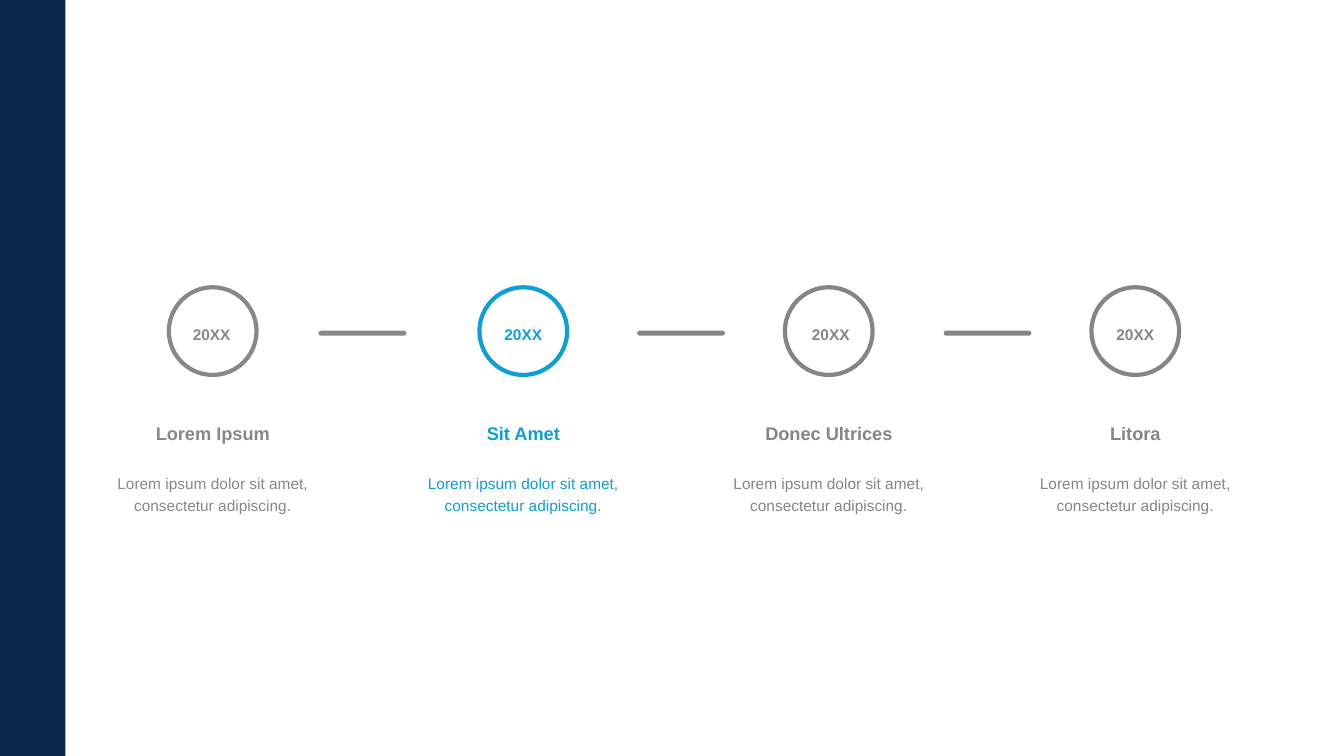
import dataclasses

import pptx
import pptx.dml.color
import pptx.enum.shapes
import pptx.enum.text
import pptx.util

Inches = pptx.util.Inches
Anchor = pptx.enum.text.MSO_ANCHOR
Preset = pptx.enum.shapes.MSO_SHAPE


@dataclasses.dataclass(frozen=True)
class Theme:
    navy: str = "09274B"
    blue: str = "0F9ED5"
    gray: str = "888888"
    dark_gray: str = "858585"
    font: str = "Arial"
    heading_size: int = 13
    text_size: int = 11
    ring_width: int = 3


@dataclasses.dataclass(frozen=True)
class Milestone:
    center: float
    year_center: float
    heading: str
    color: str


THEME = Theme()
YEAR = "20XX"
DETAIL = "Lorem ipsum dolor sit amet, consectetur adipiscing."
MILESTONES = [
    Milestone(2.11, 2.10, "Lorem Ipsum", THEME.gray),
    Milestone(5.19, 5.19, "Sit Amet", THEME.blue),
    Milestone(8.22, 8.24, "Donec Ultrices", THEME.dark_gray),
    Milestone(11.26, 11.26, "Litora", THEME.dark_gray),
]
# Left edge and color of each dash between two milestones
DASHES = [(3.16, THEME.gray), (6.32, THEME.dark_gray), (9.36, THEME.dark_gray)]
RING_SIZE = 0.87
TEXT_WIDTH = 2.49


def rgb(color):
    return pptx.dml.color.RGBColor.from_string(color)


def add_bar(shapes, preset, left, top, width, height, color):
    """Add a solid bar without an outline."""
    bar = shapes.add_shape(preset, Inches(left), Inches(top),
                           Inches(width), Inches(height))
    bar.shadow.inherit = False
    bar.fill.solid()
    bar.fill.fore_color.rgb = rgb(color)
    bar.line.fill.background()
    return bar


def add_ring(shapes, center, color):
    ring = shapes.add_shape(Preset.OVAL, Inches(center - RING_SIZE / 2),
                            Inches(2.85), Inches(RING_SIZE), Inches(RING_SIZE))
    ring.shadow.inherit = False
    ring.fill.background()
    ring.line.color.rgb = rgb(color)
    ring.line.width = pptx.util.Pt(THEME.ring_width)


def add_label(shapes, text, center, top, width, height, color,
              size=THEME.text_size, bold=False, anchor=Anchor.TOP, after=21):
    """Add a centered text box around a horizontal center."""
    label = shapes.add_textbox(Inches(center - width / 2), Inches(top),
                               Inches(width), Inches(height))
    frame = label.text_frame
    frame.word_wrap = True
    frame.vertical_anchor = anchor
    frame.margin_left = frame.margin_right = Inches(0.13)
    frame.margin_top = frame.margin_bottom = Inches(0.13)
    frame.text = text
    paragraph = frame.paragraphs[0]
    paragraph.alignment = pptx.enum.text.PP_ALIGN.CENTER
    paragraph.line_spacing = 1.15
    paragraph.space_after = pptx.util.Pt(after)
    font = paragraph.runs[0].font
    font.name = THEME.font
    font.size = pptx.util.Pt(size)
    font.bold = bold
    font.color.rgb = rgb(color)


def add_milestone(slide, milestone):
    """Group a ring with its year, heading and detail."""
    shapes = slide.shapes.add_group_shape().shapes
    center, color = milestone.center, milestone.color
    add_ring(shapes, center, color)
    add_label(shapes, YEAR, milestone.year_center, 3.09, RING_SIZE, 0.47,
              color, bold=True)
    add_label(shapes, milestone.heading, center, 3.88, TEXT_WIDTH, 0.65, color,
              size=THEME.heading_size, bold=True, anchor=Anchor.BOTTOM, after=0)
    add_label(shapes, DETAIL, center, 4.55, TEXT_WIDTH, 1.08, color)


def main():
    deck = pptx.Presentation()
    deck.slide_width = Inches(13.33)
    deck.slide_height = Inches(7.5)
    slide = deck.slides.add_slide(deck.slide_layouts[6])

    # Side band
    add_bar(slide.shapes, Preset.RECTANGLE, 0, 0, 0.65, 7.5, THEME.navy)

    # Timeline
    for milestone in MILESTONES:
        add_milestone(slide, milestone)
    for left, color in DASHES:
        dash = add_bar(slide.shapes, Preset.ROUNDED_RECTANGLE,
                       left, 3.28, 0.87, 0.05, color)
        dash.adjustments[0] = 0.5

    deck.save("out.pptx")


if __name__ == "__main__":
    main()
